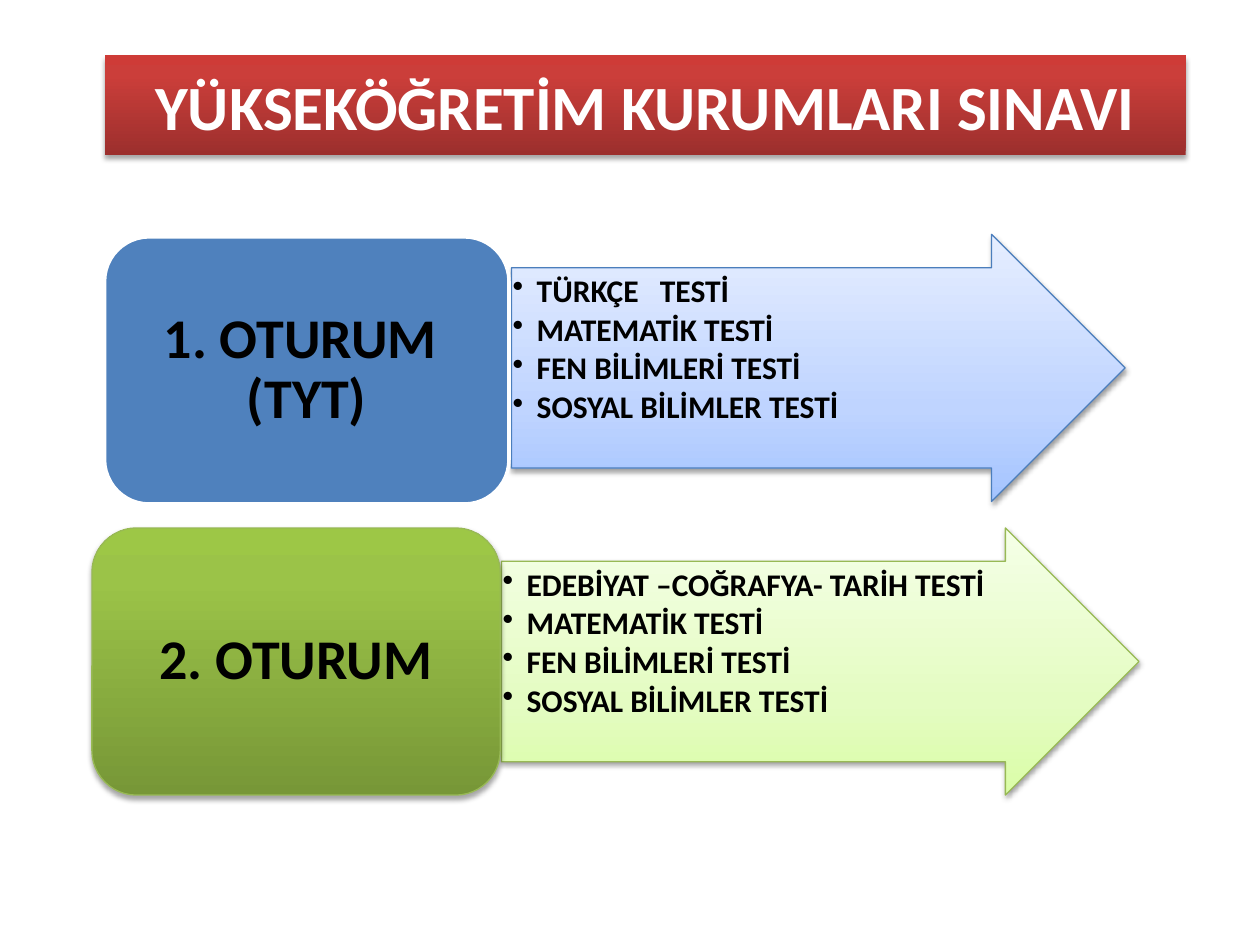
from copy import deepcopy

from lxml import etree
from pptx import Presentation
from pptx.dml.color import RGBColor
from pptx.enum.shapes import MSO_SHAPE as Shape
from pptx.enum.text import MSO_ANCHOR as Anchor, MSO_AUTO_SIZE as AutoSize, PP_ALIGN as Align
from pptx.oxml.ns import qn
from pptx.util import Inches, Pt


def add_xml(parent, tag, **attributes):
    return etree.SubElement(parent, qn(tag), attributes)


def color(value):
    return RGBColor.from_string(value)


def fill_gradient(shape, stops):
    shape.fill.gradient()
    shape.fill.gradient_angle = 90
    stop_list = shape._element.spPr.find(".//" + qn("a:gsLst"))
    stop_list.append(deepcopy(stop_list[-1]))
    for stop, (position, value) in zip(shape.fill.gradient_stops, stops):
        stop.position = position
        stop.color.rgb = color(value)


def set_outline(shape, value, width):
    shape.line.color.rgb = color(value)
    shape.line.width = Pt(width)


def add_shadow(shape, opacity, distance):
    shape.shadow.inherit = False
    effects = shape._element.spPr.find(qn("a:effectLst"))
    shadow = add_xml(effects, "a:outerShdw", blurRad=str(Pt(3.1)),
                     dist=str(Pt(distance)), dir="5400000", rotWithShape="0")
    black = add_xml(shadow, "a:srgbClr", val="000000")
    add_xml(black, "a:alpha", val=str(opacity * 1000))


def write_text(shape, lines, size, ink="000000", align=Align.CENTER, anchor=Anchor.MIDDLE,
               insets=(0.1, 0.05, 0.1, 0.05), spacing=1.0, after=0, bullets=False):
    frame = shape.text_frame
    frame.word_wrap = True
    frame.auto_size = AutoSize.NONE
    frame.vertical_anchor = anchor
    frame.margin_left, frame.margin_top, frame.margin_right, frame.margin_bottom = map(Inches, insets)
    frame.text = "\n".join(lines)
    for paragraph in frame.paragraphs:
        paragraph.alignment = align
        paragraph.line_spacing = spacing
        paragraph.space_before = Pt(0)
        paragraph.space_after = Pt(after)
        if bullets:
            paragraph.level = 1
            properties = paragraph._p.get_or_add_pPr()
            properties.set("marL", str(Inches(0.19)))
            properties.set("indent", str(Inches(-0.19)))
            add_xml(properties, "a:buChar", char="•")
        for run in paragraph.runs:
            run.font.name = "Calibri"
            run.font.size = Pt(size)
            run.font.bold = True
            run.font.color.rgb = color(ink)


def format_title(title):
    title.left, title.top, title.width, title.height = map(Inches, (0.83, 0.44, 8.58, 0.79))
    outline = add_xml(title._element.spPr, "a:prstGeom", prst="roundRect")
    add_xml(outline, "a:avLst")
    fill_gradient(title, [(0, "9C2F2D"), (0.8, "CB3E3A"), (1, "CE3B37")])
    add_shadow(title, 35, 1.8)
    write_text(title, ["YÜKSEKÖĞRETİM KURUMLARI SINAVI"], 36, ink="FFFFFF")


def add_tests_arrow(slide, left, top, width, tests, stops, edge):
    arrow = slide.shapes.add_shape(Shape.RIGHT_ARROW, *map(Inches, (left, top, width, 2.12)))
    arrow.adjustments[0] = 0.75
    arrow.adjustments[1] = 0.5
    fill_gradient(arrow, stops)
    set_outline(arrow, edge, 0.75)
    add_shadow(arrow, 38, 1.6)
    write_text(arrow, tests, 18, align=Align.LEFT, anchor=Anchor.TOP,
               insets=(0.01, 0.06, 0.01, 0.01), spacing=0.9, after=2.7, bullets=True)


def add_session(slide, left, top, width, label):
    session = slide.shapes.add_shape(Shape.ROUNDED_RECTANGLE, *map(Inches, (left, top, width, 2.12)))
    session.shadow.inherit = False
    write_text(session, [label], 32, insets=(0.03, 0, 0.03, 0), spacing=0.9)
    return session


def main():
    presentation = Presentation()
    presentation.slide_width, presentation.slide_height = Inches(10), Inches(7.5)
    slide = presentation.slides.add_slide(presentation.slide_layouts[5])
    format_title(slide.shapes.title)

    shared_tests = ["MATEMATİK TESTİ", "FEN BİLİMLERİ TESTİ", "SOSYAL BİLİMLER TESTİ"]
    add_tests_arrow(slide, 4.06, 1.86, 4.87, ["TÜRKÇE   TESTİ"] + shared_tests,
                    [(0, "A4C4FF"), (0.35, "BFD4FF"), (1, "E6EEFF")], "4B7EBC")
    first_session = add_session(slide, 0.83, 1.88, 3.21, "1. OTURUM  (TYT)")
    first_session.fill.solid()
    first_session.fill.fore_color.rgb = color("4F81BD")
    set_outline(first_session, "FFFFFF", 2)

    add_tests_arrow(slide, 3.98, 4.19, 5.06, ["EDEBİYAT –COĞRAFYA- TARİH TESTİ"] + shared_tests,
                    [(0, "DAFDA7"), (0.35, "E4FCC2"), (1, "F5FFE7")], "98B955")
    second_session = add_session(slide, 0.73, 4.19, 3.24, "2. OTURUM")
    fill_gradient(second_session, [(0, "779737"), (0.8, "9BC348"), (1, "9DC746")])
    set_outline(second_session, "98B955", 0.75)
    add_shadow(second_session, 35, 1.8)

    presentation.save("out.pptx")


if __name__ == "__main__":
    main()
